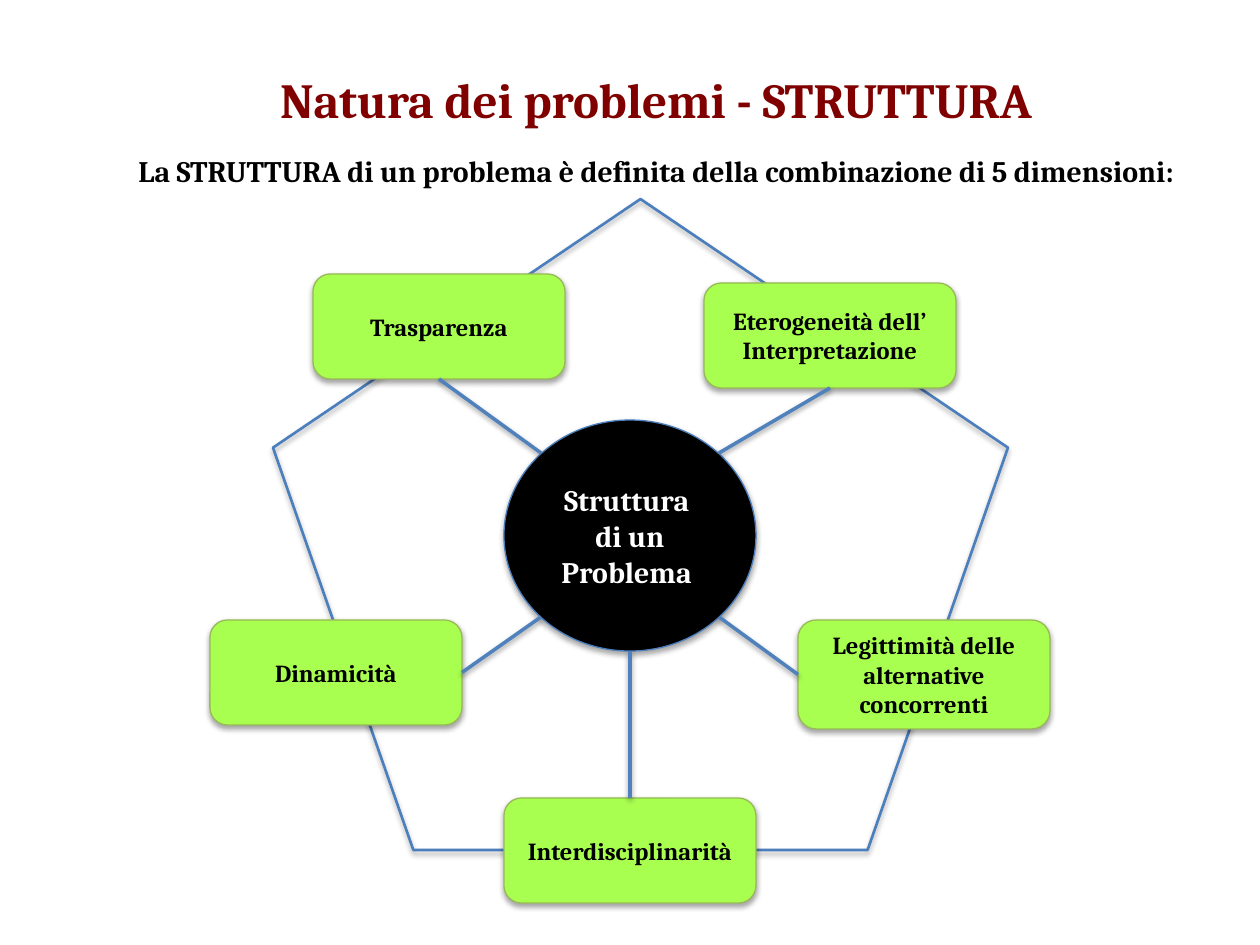
from lxml.etree import SubElement
from pptx import Presentation
from pptx.dml.color import RGBColor
from pptx.enum.shapes import MSO_CONNECTOR, MSO_SHAPE
from pptx.enum.text import MSO_ANCHOR, PP_ALIGN
from pptx.oxml.ns import qn
from pptx.util import Pt

EMU_PER_PX = 914400 / 126
FONT = "Cambria"
BLACK = RGBColor(0x00, 0x00, 0x00)
WHITE = RGBColor(0xFF, 0xFF, 0xFF)
MAROON = RGBColor(0x80, 0x00, 0x00)
LIME = RGBColor(0xA8, 0xFF, 0x50)
OLIVE = RGBColor(0x98, 0xB9, 0x55)
BLUE = RGBColor(0x4B, 0x7E, 0xBC)
SPOKE_BLUE = RGBColor(0x4F, 0x81, 0xBD)

BOTTOM, LEFT, TOP, RIGHT = 2, 1, 0, 3
BOX_WIDTH, BOX_HEIGHT = 252, 105
CENTER_X, CENTER_Y = 630, 535
DIAGONAL_X, DIAGONAL_Y = 89, 82
DIMENSIONS = [
    ("Trasparenza", 313, 274, BOX_HEIGHT, BOTTOM, (-1, -1)),
    ("Eterogeneità dell’ Interpretazione", 704, 283, BOX_HEIGHT, BOTTOM, (1, -1)),
    ("Dinamicità", 210, 620, BOX_HEIGHT, RIGHT, (-1, 1)),
    ("Interdisciplinarità", 504, 798, BOX_HEIGHT, TOP, (0, 1)),
    ("Legittimità delle alternative concorrenti", 798, 620, 109, LEFT, (1, 1)),
]


def px(*values):
    return [round(value * EMU_PER_PX) for value in values]


def write_text(shape, text, size=14, color=BLACK, align=PP_ALIGN.CENTER,
               anchor=MSO_ANCHOR.MIDDLE, wrap=True):
    frame = shape.text_frame
    frame.word_wrap = wrap
    frame.vertical_anchor = anchor
    frame.text = text
    for paragraph in frame.paragraphs:
        paragraph.alignment = align
        font = paragraph.font
        font.name, font.size, font.bold = FONT, Pt(size), True
        font.color.rgb = color


def add_shadow(shape, distance, opacity):
    properties = shape._element.spPr
    effects = properties.find(qn("a:effectLst"))
    if effects is None:
        effects = SubElement(properties, qn("a:effectLst"))
    shadow = SubElement(effects, qn("a:outerShdw"), blurRad="40000",
                        dist=str(distance), dir="5400000", rotWithShape="0")
    color = SubElement(shadow, qn("a:srgbClr"), val="000000")
    SubElement(color, qn("a:alpha"), val=str(opacity * 1000))


class Diagram:
    def __init__(self, slide):
        self.shapes = slide.shapes

    def shape(self, kind, left, top, width, height, line, fill=None, weight=0.75):
        shape = self.shapes.add_shape(kind, *px(left, top, width, height))
        shape.shadow.inherit = False
        if fill is None:
            shape.fill.background()
        else:
            shape.fill.solid()
            shape.fill.fore_color.rgb = fill
        shape.line.color.rgb = line
        shape.line.width = Pt(weight)
        add_shadow(shape, 23000, 35)
        return shape

    def text(self, text, left, top, width, height, **style):
        box = self.shapes.add_textbox(*px(left, top, width, height))
        write_text(box, text, anchor=MSO_ANCHOR.TOP, **style)

    def spoke(self, start, box, site):
        start_x, start_y = px(*start)
        spoke = self.shapes.add_connector(MSO_CONNECTOR.STRAIGHT,
                                          start_x, start_y, start_x, start_y)
        spoke.end_connect(box, site)
        spoke.line.color.rgb = SPOKE_BLUE
        spoke.line.width = Pt(2)
        add_shadow(spoke, 20000, 38)


def main():
    presentation = Presentation()
    presentation.slide_width, presentation.slide_height = px(1260, 945)
    slide = presentation.slides.add_slide(presentation.slide_layouts[6])
    diagram = Diagram(slide)

    diagram.shape(MSO_SHAPE.REGULAR_PENTAGON, 273, 199, 735, 651, BLUE, weight=1.5)
    hub = diagram.shape(MSO_SHAPE.OVAL, 504, 420, 252, 231, BLUE, fill=BLACK)
    write_text(hub, "Struttura \ndi un Problema ", size=17, color=WHITE)
    diagram.text("Natura dei problemi - STRUTTURA", 220, 63, 872, 100,
                 size=28, color=MAROON)
    diagram.text("La STRUTTURA di un problema è definita della combinazione di 5 dimensioni:",
                 126, 147, 1077, 49, size=17, align=PP_ALIGN.LEFT, wrap=False)

    boxes = []
    for text, left, top, height, site, direction in DIMENSIONS:
        box = diagram.shape(MSO_SHAPE.ROUNDED_RECTANGLE, left, top, BOX_WIDTH,
                            height, OLIVE, fill=LIME)
        write_text(box, text)
        boxes.append((box, site, direction))

    for box, site, (across, down) in boxes:
        reach = DIAGONAL_Y if across else 116
        start = (CENTER_X + across * DIAGONAL_X, CENTER_Y + down * reach)
        diagram.spoke(start, box, site)

    presentation.save("out.pptx")


if __name__ == "__main__":
    main()
